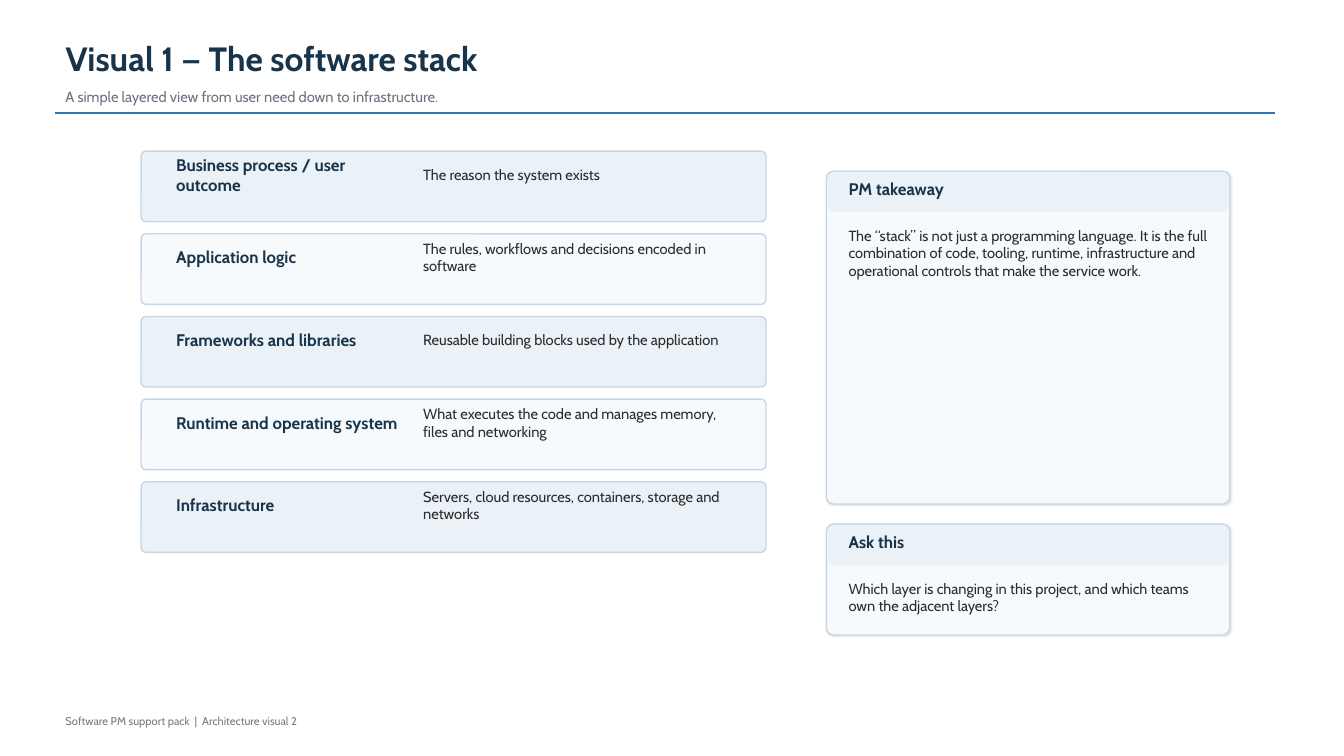
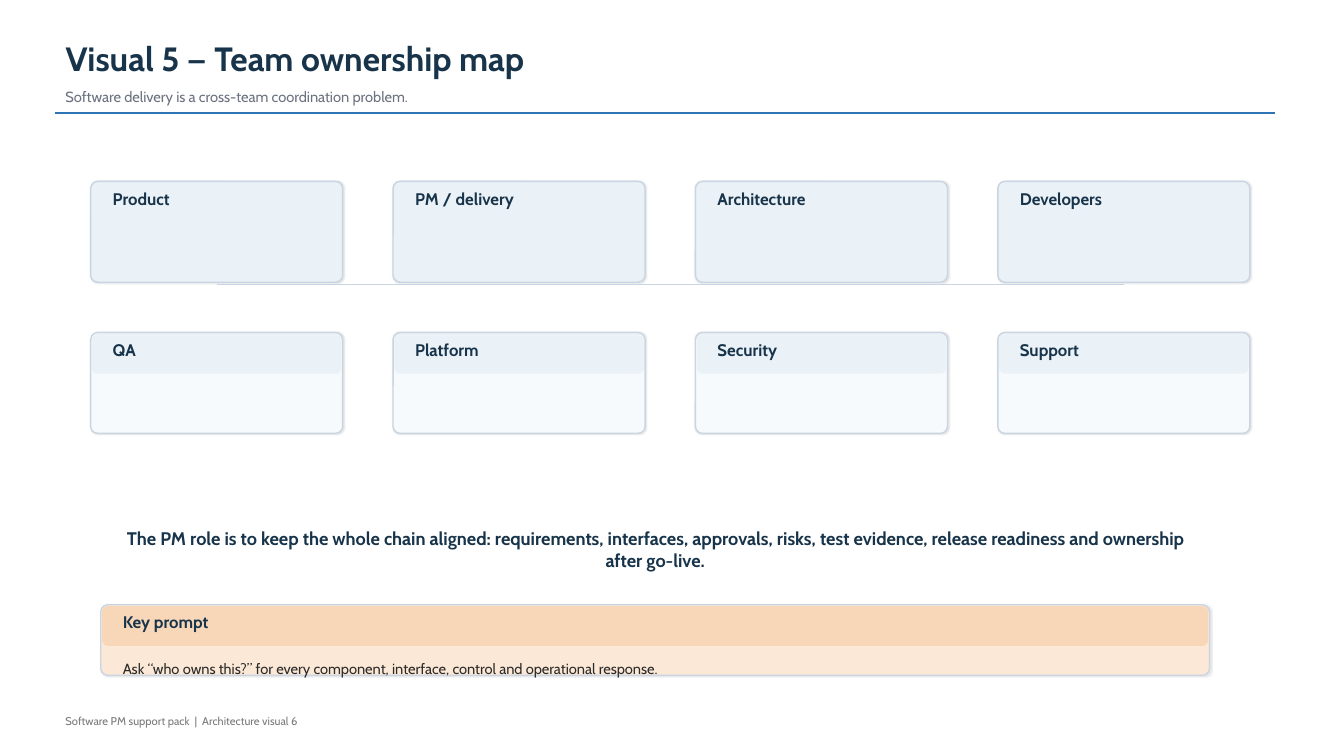
from pptx import Presentation
from pptx.dml.color import RGBColor
from pptx.enum.shapes import MSO_CONNECTOR as CONN, MSO_SHAPE as SHAPE
from pptx.enum.text import MSO_ANCHOR as ANCHOR, MSO_AUTO_SIZE as FIT, PP_ALIGN as ALIGN
from pptx.oxml import parse_xml
from pptx.oxml.ns import nsdecls, qn
from pptx.util import Pt

FONT = "Cabin"
COLORS = {
    "navy": "18344A", "text": "2B2B2B", "subtitle": "6B7280", "footer": "7A7A7A",
    "rule": "2F75B5", "border": "C9D5E2", "band": "EAF1F7", "pale": "F7FAFC",
    "peach": "FCE8D6", "peach_band": "F8D7B8",
}
TITLE_ONLY = 5


def rgb(name):
    return RGBColor.from_string(COLORS[name])


# Basic parts; every box is (left, top, width, height) in points
def write(sp, text, size, color, bold=False, align=ALIGN.LEFT, anchor=ANCHOR.MIDDLE):
    tf = sp.text_frame
    tf.word_wrap = True
    tf.auto_size = FIT.NONE
    tf.vertical_anchor = anchor
    p = tf.paragraphs[0]
    p.text = text
    p.alignment = align
    p.font.name, p.font.size, p.font.bold = FONT, Pt(size), bold
    p.font.color.rgb = rgb(color)


def add_text(s, box, text, size, color, **style):
    write(s.shapes.add_textbox(*map(Pt, box)), text, size, color, **style)


def add_line(s, x1, x2, y, color):
    ln = s.shapes.add_connector(CONN.STRAIGHT, Pt(x1), Pt(y), Pt(x2), Pt(y))
    ln.line.color.rgb = rgb(color)
    ln.line.width = Pt(1)
    ln._element.spPr.append(parse_xml(f"<a:effectLst {nsdecls('a')}/>"))


def add_panel(s, box, fill, border, radius=3.6):
    sp = s.shapes.add_shape(SHAPE.ROUNDED_RECTANGLE, *map(Pt, box))
    sp.adjustments[0] = radius / min(box[2:])
    sp.shadow.inherit = False
    sp.fill.solid()
    sp.fill.fore_color.rgb = rgb(fill)
    sp.line.color.rgb = rgb(border)
    sp.line.width = Pt(1)
    return sp


def add_shadow(sp):
    effects = sp._element.spPr.find(qn("a:effectLst"))
    effects.append(parse_xml(
        f'<a:outerShdw {nsdecls("a")} blurRad="{Pt(1)}" dist="{Pt(0.5)}" dir="2700000"'
        ' algn="ctr" rotWithShape="0"><a:srgbClr val="000000"><a:alpha val="10000"/>'
        '</a:srgbClr></a:outerShdw>'))


# Card with a header band and optional body text
def add_card(s, box, heading, body=None, fill="pale", band="band"):
    x, y, w, h = box
    add_shadow(add_panel(s, box, fill, "border", radius=5.04))
    add_panel(s, (x + 1.44, y + 1.44, w - 2.88, 27.36), band, band)
    left, width = x + 8.64, w - 17.28
    add_text(s, (left, y + 5.76, width, 12.96), heading, 12, "navy", bold=True)
    if body:
        add_text(s, (left, y + 36, width, h - 43.2), body, 10.5, "text", anchor=ANCHOR.TOP)


# Title, subtitle, rule and footer
def add_frame(prs, title, subtitle, number):
    s = prs.slides.add_slide(prs.slide_layouts[TITLE_ONLY])
    sp = s.shapes.title
    sp.left, sp.top, sp.width, sp.height = map(Pt, (39.6, 25.2, 705.6, 32.4))
    write(sp, title, 24, "navy", bold=True)
    add_text(s, (39.6, 59.04, 864, 20.16), subtitle, 10.5, "subtitle")
    add_line(s, 39.6, 910.8, 80.64, "rule")
    add_text(s, (39.6, 507.6, 288, 14.4),
             f"Software PM support pack  |  Architecture visual {number}", 8, "footer")
    return s


# Stacked layers with alternating fills
def add_stack(s, box, layers, gap=8.64):
    x, y, w, h = box
    row_h = (h - gap * (len(layers) - 1)) / len(layers)
    for i, (name, meaning) in enumerate(layers):
        top = y + i * (row_h + gap)
        add_panel(s, (x, top, w, row_h), ("band", "pale")[i % 2], "border")
        add_text(s, (x + 18, top + 10.08, 172.8, 12.96), name, 12, "navy", bold=True)
        add_text(s, (x + 194.4, top + 10.08, 226.8, 12.96), meaning, 10.5, "text")


# Grid of team cards, with the teams of the top row linked
def add_team_grid(s, box, rows, gap=36):
    x, y, w, h = box
    cols = len(rows[0])
    card_w = (w - gap * (cols - 1)) / cols
    card_h = (h - gap * (len(rows) - 1)) / len(rows)
    pitch = card_w + gap
    for r, teams in enumerate(rows):
        for c, team in enumerate(teams):
            add_card(s, (x + c * pitch, y + r * (card_h + gap), card_w, card_h), team,
                     fill=("band", "pale")[r])
    for c in range(cols - 1):
        start = x + card_w / 2 + c * pitch
        add_line(s, start, start + pitch, y + card_h + 1.44, "border")


def stack_slide(prs):
    s = add_frame(prs, "Visual 1 — The software stack",
                  "A simple layered view from user need down to infrastructure.", 2)
    add_stack(s, (100.8, 108, 446.4, 286.56), [
        ("Business process / user outcome", "The reason the system exists"),
        ("Application logic", "The rules, workflows and decisions encoded in software"),
        ("Frameworks and libraries", "Reusable building blocks used by the application"),
        ("Runtime and operating system",
         "What executes the code and manages memory, files and networking"),
        ("Infrastructure", "Servers, cloud resources, containers, storage and networks"),
    ])
    add_card(s, (590.4, 122.4, 288, 237.6), "PM takeaway",
             "The “stack” is not just a programming language. It is the full combination of "
             "code, tooling, runtime, infrastructure and operational controls that make the "
             "service work.")
    add_card(s, (590.4, 374.4, 288, 79.2), "Ask this",
             "Which layer is changing in this project, and which teams own the adjacent layers?")


def ownership_slide(prs):
    s = add_frame(prs, "Visual 5 — Team ownership map",
                  "Software delivery is a cross-team coordination problem.", 6)
    add_team_grid(s, (64.8, 129.6, 828, 180), [
        ("Product", "PM / delivery", "Architecture", "Developers"),
        ("QA", "Platform", "Security", "Support"),
    ])
    add_text(s, (72, 374.4, 792, 36),
             "The PM role is to keep the whole chain aligned: requirements, interfaces, "
             "approvals, risks, test evidence, release readiness and ownership after go-live.",
             13, "navy", bold=True, align=ALIGN.CENTER)
    add_card(s, (72, 432, 792, 50.4), "Key prompt",
             "Ask “who owns this?” for every component, interface, control and operational "
             "response.", fill="peach", band="peach_band")


def main():
    prs = Presentation()
    prs.slide_width, prs.slide_height = Pt(960), Pt(540)
    stack_slide(prs)
    ownership_slide(prs)
    prs.save("out.pptx")


if __name__ == "__main__":
    main()
